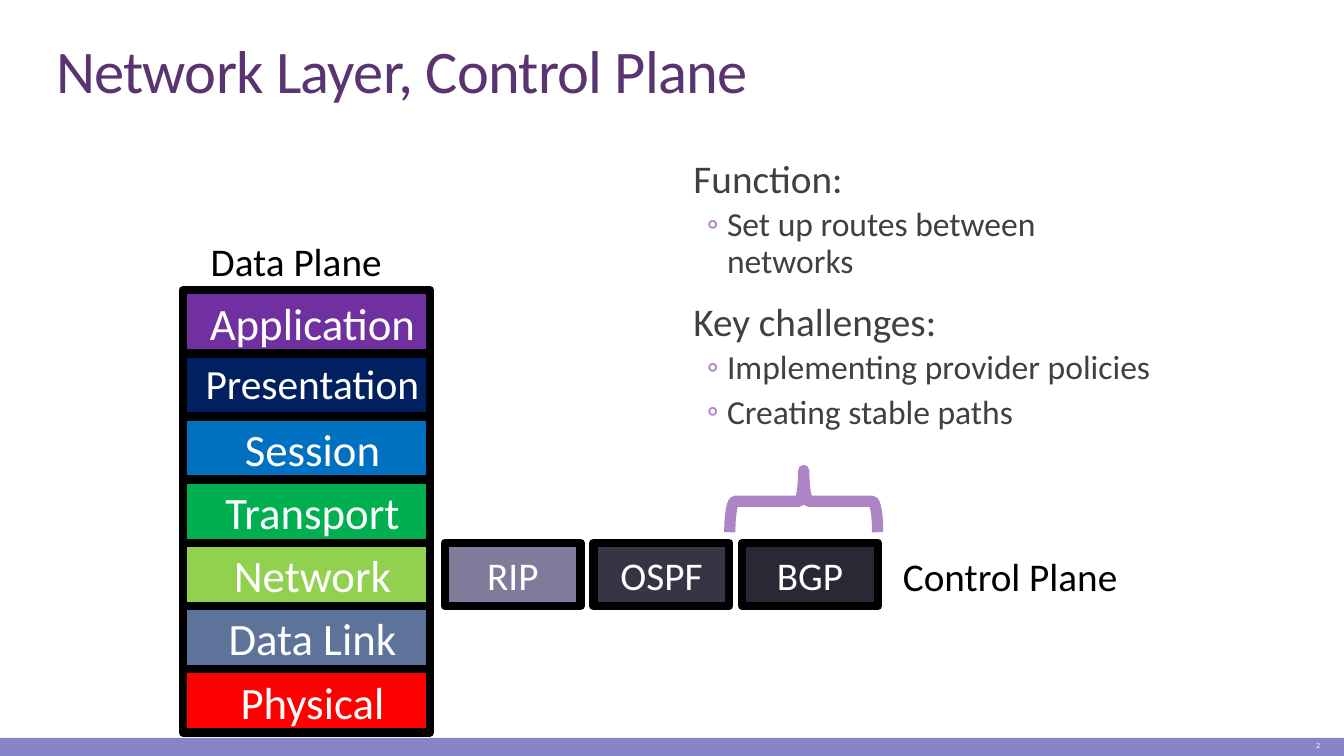
from lxml import etree
from pptx import Presentation
from pptx.dml.color import RGBColor
from pptx.enum import shapes, text
from pptx.oxml import ns
from pptx.util import Pt

COLORS = {
    "title": "5A3471", "body": "404040", "accent": "AD84C6", "footer": "8784C7",
    "black": "000000", "white": "FFFFFF",
}
LAYERS = {
    "Application": "7030A0", "Presentation": "002060", "Session": "0070C0",
    "Transport": "00B050", "Network": "92D050", "Data Link": "5D739A",
    "Physical": "FF0000",
}
PROTOCOLS = {"RIP": "7F7B9A", "OSPF": "373545", "BGP": "292834"}
TOPICS = {
    "Function:": ["Set up routes between networks"],
    "Key challenges:": ["Implementing provider policies", "Creating stable paths"],
}

STACK_LEFT, STACK_TOP, STACK_WIDTH = 97.9, 155.5, 132.5
ROW_HEIGHT = 33.84
PROTOCOL_LEFT, PROTOCOL_WIDTH, PROTOCOL_STEP = 238.4, 72.7, 79.6

CENTER, MIDDLE = text.PP_ALIGN.CENTER, text.MSO_ANCHOR.MIDDLE
LAYER_FRAME = {
    "margin_left": Pt(5), "margin_right": Pt(5), "margin_top": Pt(2.7),
    "margin_bottom": Pt(2.7), "vertical_anchor": text.MSO_ANCHOR.TOP,
}
HEADING = {"line_spacing": 0.9, "space_before": Pt(9), "space_after": Pt(1.5)}
ITEM = {"line_spacing": 0.9, "space_before": Pt(1.5), "space_after": Pt(3)}


def apply_format(target, values):
    for attribute, value in values.items():
        setattr(target, attribute, value)


def write(paragraph, words, size, color, values=None):
    run = paragraph.add_run()
    run.text = words
    apply_format(run.font, {"name": "Calibri", "size": Pt(size)})
    run.font.color.rgb = RGBColor.from_string(color)
    apply_format(paragraph, values or {})
    return run


def set_indent(paragraph, left, first=0):
    properties = paragraph._p.get_or_add_pPr()
    properties.set("marL", str(Pt(left)))
    properties.set("indent", str(Pt(first)))
    return properties


def add_bullet(paragraph):
    properties = set_indent(paragraph, 23, -10.8)
    color = etree.SubElement(properties, ns.qn("a:buClr"))
    etree.SubElement(color, ns.qn("a:srgbClr"), val=COLORS["accent"])
    etree.SubElement(properties, ns.qn("a:buFont"), typeface="Calibri")
    etree.SubElement(properties, ns.qn("a:buChar"), char="◦")


def add_shape(slide, kind, box, fill=None, line=None, weight=4.5):
    shape = slide.shapes.add_shape(kind, *map(Pt, box))
    shape.shadow.inherit = False
    if fill:
        shape.fill.solid()
        shape.fill.fore_color.rgb = RGBColor.from_string(fill)
    else:
        shape.fill.background()
    if line:
        shape.line.color.rgb = RGBColor.from_string(line)
        shape.line.width = Pt(weight)
    else:
        shape.line.fill.background()
    return shape


def add_block(slide, box, fill, label, size, frame_values):
    block = add_shape(slide, shapes.MSO_SHAPE.RECTANGLE, box, fill, COLORS["black"])
    apply_format(block.text_frame, frame_values)
    paragraph = block.text_frame.paragraphs[0]
    write(paragraph, label, size, COLORS["white"], {"alignment": CENTER})
    return paragraph


def add_text_frame(slide, box, values):
    frame = slide.shapes.add_textbox(*map(Pt, box)).text_frame
    apply_format(frame, values)
    return frame


def add_label(slide, box, words):
    frame = add_text_frame(slide, box, {
        "word_wrap": False, "auto_size": text.MSO_AUTO_SIZE.SHAPE_TO_FIT_TEXT})
    write(frame.paragraphs[0], words, 21, COLORS["black"])


def add_title(slide):
    frame = add_text_frame(slide, (23, 17.3, 682.6, 43.2), {
        "word_wrap": True, "vertical_anchor": text.MSO_ANCHOR.BOTTOM})
    run = write(frame.paragraphs[0], "Network Layer, Control Plane", 32.4,
                COLORS["title"], {"line_spacing": 0.85})
    run.font._element.set("spc", "-40")


def add_topics(slide):
    frame = add_text_frame(slide, (366.5, 82.1, 252.7, 283), {
        "word_wrap": True, "margin_left": 0, "margin_right": 0})
    paragraph = frame.paragraphs[0]
    for heading, items in TOPICS.items():
        if paragraph.runs:
            paragraph = frame.add_paragraph()
        write(paragraph, heading, 21, COLORS["body"], HEADING)
        set_indent(paragraph, 5)
        for item in items:
            paragraph = frame.add_paragraph()
            paragraph.level = 1
            write(paragraph, item, 18, COLORS["body"], ITEM)
            add_bullet(paragraph)


def add_footer(slide):
    add_shape(slide, shapes.MSO_SHAPE.RECTANGLE, (0, 395.3, 720, 9.7), COLORS["footer"])
    frame = add_text_frame(slide, (636.5, 393.1, 77.8, 12.2), {
        "word_wrap": True, "vertical_anchor": MIDDLE})
    write(frame.paragraphs[0], "2", 4.3, COLORS["white"],
          {"alignment": text.PP_ALIGN.RIGHT})


def add_data_plane(slide):
    for row, (layer, fill) in enumerate(LAYERS.items()):
        box = (STACK_LEFT, STACK_TOP + row * ROW_HEIGHT, STACK_WIDTH, ROW_HEIGHT)
        size = 22.2 if layer == "Presentation" else 24
        set_indent(add_block(slide, box, fill, layer, size, LAYER_FRAME), 6.5)
    add_label(slide, (105.8, 123.8, 106.6, 32.4), "Data Plane")


def add_control_plane(slide):
    top = STACK_TOP + list(LAYERS).index("Network") * ROW_HEIGHT
    for column, (protocol, fill) in enumerate(PROTOCOLS.items()):
        box = (PROTOCOL_LEFT + column * PROTOCOL_STEP, top, PROTOCOL_WIDTH, ROW_HEIGHT)
        add_block(slide, box, fill, protocol, 21, {"vertical_anchor": MIDDLE})
    brace = add_shape(slide, shapes.MSO_SHAPE.LEFT_BRACE, (414, 229, 33.1, 79.2),
                      line=COLORS["accent"], weight=6)
    brace.rotation = 90
    add_label(slide, (476.6, 292.3, 131, 32.4), "Control Plane")


def main():
    presentation = Presentation()
    apply_format(presentation, {"slide_width": Pt(720), "slide_height": Pt(405)})
    slide = presentation.slides.add_slide(presentation.slide_layouts[6])
    add_footer(slide)
    add_title(slide)
    add_topics(slide)
    add_data_plane(slide)
    add_control_plane(slide)
    presentation.save("out.pptx")


if __name__ == "__main__":
    main()
